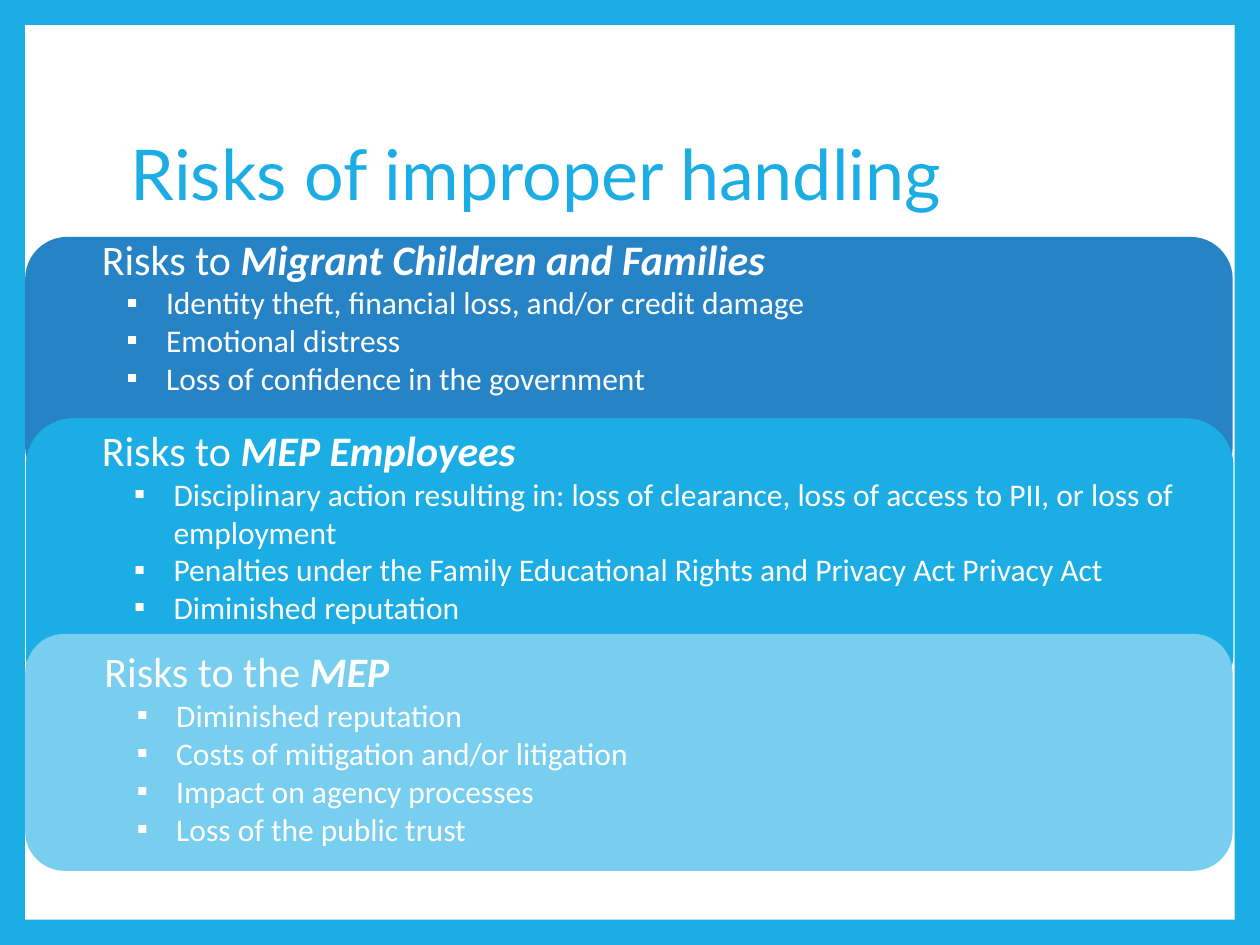
"""Build the slide on the risks of improper handling."""
from dataclasses import dataclass

import pptx
import pptx.dml.color
import pptx.enum.shapes
import pptx.enum.text
import pptx.oxml
import pptx.oxml.ns
import pptx.slide
import pptx.text.text
import pptx.util

Pt = pptx.util.Pt
Shapes = pptx.enum.shapes.MSO_SHAPE
WHITE = "FFFFFF"
SKY = "1CADE4"
BULLET_HANG = 22.5


@dataclass
class Box:
    left: float
    top: float
    width: float
    height: float

    def lengths(self) -> list[pptx.util.Length]:
        return [Pt(value) for value in (self.left, self.top, self.width, self.height)]


@dataclass
class RiskPanel:
    panel: Box
    fill: str
    text: Box
    lead: str
    audience: str
    bullet_indent: float
    risks: list[str]


RISK_PANELS = [
    RiskPanel(
        Box(14.4, 135.4, 690, 144), "2683C6", Box(51.1, 129.6, 545.8, 133.2),
        "Risks to ", "Migrant Children and Families", 36.7,
        [
            "Identity theft, financial loss, and/or credit damage",
            "Emotional distress",
            "Loss of confidence in the government",
        ],
    ),
    RiskPanel(
        Box(14.8, 239, 690, 162), SKY, Box(51.1, 239, 655.2, 145.4),
        "Risks to ", "MEP Employees", 41,
        [
            "Disciplinary action resulting in: loss of clearance, loss of access to PII,"
            " or loss of employment",
            "Penalties under the Family Educational Rights and Privacy Act Privacy Act",
            "Diminished reputation",
        ],
    ),
    RiskPanel(
        Box(14.4, 362.2, 690, 135.4), "77CEEF", Box(52.6, 365.5, 545.8, 145),
        "Risks to the ", "MEP", 41,
        [
            "Diminished reputation",
            "Costs of mitigation and/or litigation",
            "Impact on agency processes",
            "Loss of the public trust",
        ],
    ),
]


def color(value: str) -> pptx.dml.color.RGBColor:
    return pptx.dml.color.RGBColor.from_string(value)


def add_panel(slide: pptx.slide.Slide, box: Box, fill: str, kind: Shapes) -> None:
    shape = slide.shapes.add_shape(kind, *box.lengths())
    shape.shadow.inherit = False
    shape.fill.solid()
    shape.fill.fore_color.rgb = color(fill)
    shape.line.fill.background()


def add_text_frame(slide: pptx.slide.Slide, box: Box) -> pptx.text.text.TextFrame:
    text_frame = slide.shapes.add_textbox(*box.lengths()).text_frame
    text_frame.word_wrap = True
    return text_frame


def format_runs(
    paragraph: pptx.text.text._Paragraph, size: float, fill: str = WHITE, name: str = "Calibri"
) -> None:
    for run in paragraph.runs:
        run.font.size = Pt(size)
        run.font.name = name
        run.font.color.rgb = color(fill)


def add_bullet(paragraph: pptx.text.text._Paragraph, indent: float) -> None:
    properties = paragraph._p.get_or_add_pPr()
    properties.set("marL", str(Pt(indent)))
    properties.set("indent", str(-Pt(BULLET_HANG)))
    namespace = pptx.oxml.ns.nsdecls("a")
    for element in (
        f'<a:buClr {namespace}><a:srgbClr val="{WHITE}"/></a:buClr>',
        f'<a:buFont {namespace} typeface="Calibri"/>',
        f'<a:buChar {namespace} char="▪"/>',
    ):
        properties.append(pptx.oxml.parse_xml(element))


def add_title(slide: pptx.slide.Slide, text: str) -> None:
    text_frame = add_text_frame(slide, Box(67.7, 48.2, 583.2, 106.6))
    text_frame.vertical_anchor = pptx.enum.text.MSO_ANCHOR.MIDDLE
    text_frame.text = text
    paragraph = text_frame.paragraphs[0]
    paragraph.line_spacing = 0.9
    format_runs(paragraph, 40, SKY, "Lato")


def add_risk_panel(slide: pptx.slide.Slide, risk_panel: RiskPanel) -> None:
    add_panel(slide, risk_panel.panel, risk_panel.fill, Shapes.ROUNDED_RECTANGLE)
    text_frame = add_text_frame(slide, risk_panel.text)
    text_frame.text = risk_panel.lead
    heading = text_frame.paragraphs[0]
    audience = heading.add_run()
    audience.text = risk_panel.audience
    audience.font.bold = audience.font.italic = True
    format_runs(heading, 24)
    for risk in risk_panel.risks:
        paragraph = text_frame.add_paragraph()
        paragraph.text = risk
        format_runs(paragraph, 18)
        add_bullet(paragraph, risk_panel.bullet_indent)


def main() -> None:
    presentation = pptx.Presentation()
    presentation.slide_width = Pt(720)
    presentation.slide_height = Pt(540)
    slide = presentation.slides.add_slide(presentation.slide_layouts[6])
    slide.background.fill.solid()
    slide.background.fill.fore_color.rgb = color(SKY)
    add_panel(slide, Box(14.4, 14.4, 691.2, 511.2), WHITE, Shapes.RECTANGLE)
    add_title(slide, "Risks of improper handling")
    for risk_panel in RISK_PANELS:
        add_risk_panel(slide, risk_panel)
    presentation.save("out.pptx")


if __name__ == "__main__":
    main()
